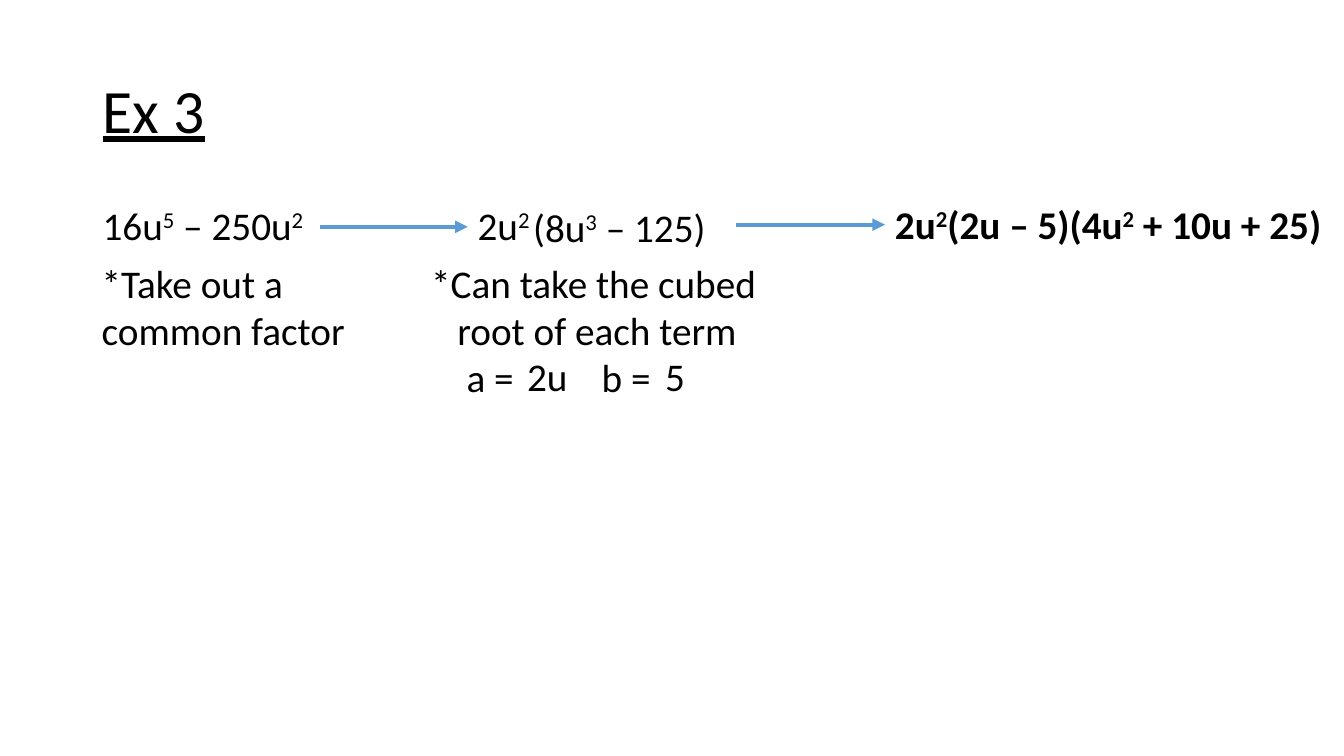
"""Build a worked example that factors a difference of cubes."""
from dataclasses import dataclass

from lxml.etree import SubElement
from pptx import Presentation
from pptx.dml.color import RGBColor
from pptx.enum.shapes import MSO_CONNECTOR
from pptx.enum.text import MSO_ANCHOR
from pptx.oxml.ns import qn
from pptx.slide import Slide
from pptx.util import Inches, Pt


@dataclass(frozen=True)
class Theme:
    font: str = "Calibri"
    ink: RGBColor = RGBColor(0x00, 0x00, 0x00)
    arrow: RGBColor = RGBColor(0x5B, 0x9B, 0xD5)
    title_size: int = 44
    text_size: int = 28
    arrow_width: int = 3


@dataclass(frozen=True)
class Line:
    """A paragraph whose every second piece is a superscript."""
    pieces: tuple[str, ...]
    tabs: tuple[float, ...] = ()


@dataclass(frozen=True)
class Block:
    """A text box placed in percent of the slide's size."""
    left: float
    top: float
    width: float
    height: float
    lines: tuple[Line, ...]
    size: int
    bold: bool = False
    underline: bool = False
    wrap: bool = False
    spacing: float = 1.0
    before: int = 0
    anchor: MSO_ANCHOR = MSO_ANCHOR.TOP


@dataclass(frozen=True)
class Arrow:
    """A level arrow placed in percent of the slide's size."""
    start: float
    end: float
    row: float


THEME = Theme()
WIDTH, HEIGHT = Inches(13.33), Inches(7.5)
MARGIN, NOTE_ROW, STEP_HEIGHT = 6.9, 33.6, 7.6

BLOCKS = (
    Block(MARGIN, 5.33, 86.25, 19.33, (Line(("Ex 3",)),), THEME.title_size,
          underline=True, wrap=True, spacing=0.9, anchor=MSO_ANCHOR.MIDDLE),
    Block(MARGIN, 26.67, 86.25, 63.47, (Line(("16u", "5", " – 250u", "2")),),
          THEME.text_size, wrap=True, spacing=0.9, before=10),
    Block(31.35, NOTE_ROW, 26.63, 20.13,
          (Line(("*Can take the cubed",)),
           Line(("\troot of each term",), (0.26,)),
           Line(("\ta =\tb =",), (0.35, 1.69))),
          THEME.text_size, wrap=True),
    Block(35.85, 46, 16.13, STEP_HEIGHT, (Line(("\t2u\t5",), (0.35, 1.72)),),
          THEME.text_size, wrap=True),
    Block(6.83, NOTE_ROW, 19.8, 13.87,
          (Line(("*Take out a",)), Line(("common factor",))), THEME.text_size),
    Block(34.8, 26, 5.55, STEP_HEIGHT, (Line(("2u", "2")),), THEME.text_size),
    Block(65.85, 25.87, 33.98, STEP_HEIGHT,
          (Line(("2u", "2", "(2u – 5)(4u", "2", " + 10u + 25)")),),
          THEME.text_size, bold=True),
    Block(38.93, 26.27, 14.7, STEP_HEIGHT, (Line(("(8u", "3", " – 125)")),),
          THEME.text_size),
)
ARROWS = (Arrow(23.78, 34.8, 30), Arrow(54.75, 65.85, 29.73))


def across(share: float) -> int:
    return round(WIDTH * share / 100)


def down(share: float) -> int:
    return round(HEIGHT * share / 100)


def add_block(s: Slide, block: Block) -> None:
    sp = s.shapes.add_textbox(across(block.left), down(block.top),
                              across(block.width), down(block.height))
    tf = sp.text_frame
    tf.word_wrap = block.wrap
    tf.vertical_anchor = block.anchor
    for i, line in enumerate(block.lines):
        p = tf.add_paragraph() if i else tf.paragraphs[0]
        p.line_spacing = block.spacing
        p.space_before = Pt(block.before)
        if line.tabs:
            tab_list = SubElement(p._p.get_or_add_pPr(), qn("a:tabLst"))
            for stop in line.tabs:
                SubElement(tab_list, qn("a:tab"), pos=str(Inches(stop)), algn="l")
        for j, piece in enumerate(line.pieces):
            r = p.add_run()
            r.text = piece
            r.font.name = THEME.font
            r.font.size = Pt(block.size)
            r.font.bold = block.bold
            r.font.underline = block.underline
            r.font.color.rgb = THEME.ink
            if j % 2:
                r._r.get_or_add_rPr().set("baseline", "30000")


def add_arrow(s: Slide, arrow: Arrow) -> None:
    y = down(arrow.row)
    sp = s.shapes.add_connector(MSO_CONNECTOR.STRAIGHT, across(arrow.start), y,
                                across(arrow.end), y)
    sp.line.color.rgb = THEME.arrow
    sp.line.width = Pt(THEME.arrow_width)
    SubElement(sp.line._get_or_add_ln(), qn("a:tailEnd"), type="triangle")
    SubElement(sp._element.spPr, qn("a:effectLst"))


def main() -> None:
    prs = Presentation()
    prs.slide_width, prs.slide_height = WIDTH, HEIGHT
    s = prs.slides.add_slide(prs.slide_layouts[6])
    for block in BLOCKS:
        add_block(s, block)
    for arrow in ARROWS:
        add_arrow(s, arrow)
    prs.save("out.pptx")


if __name__ == "__main__":
    main()
